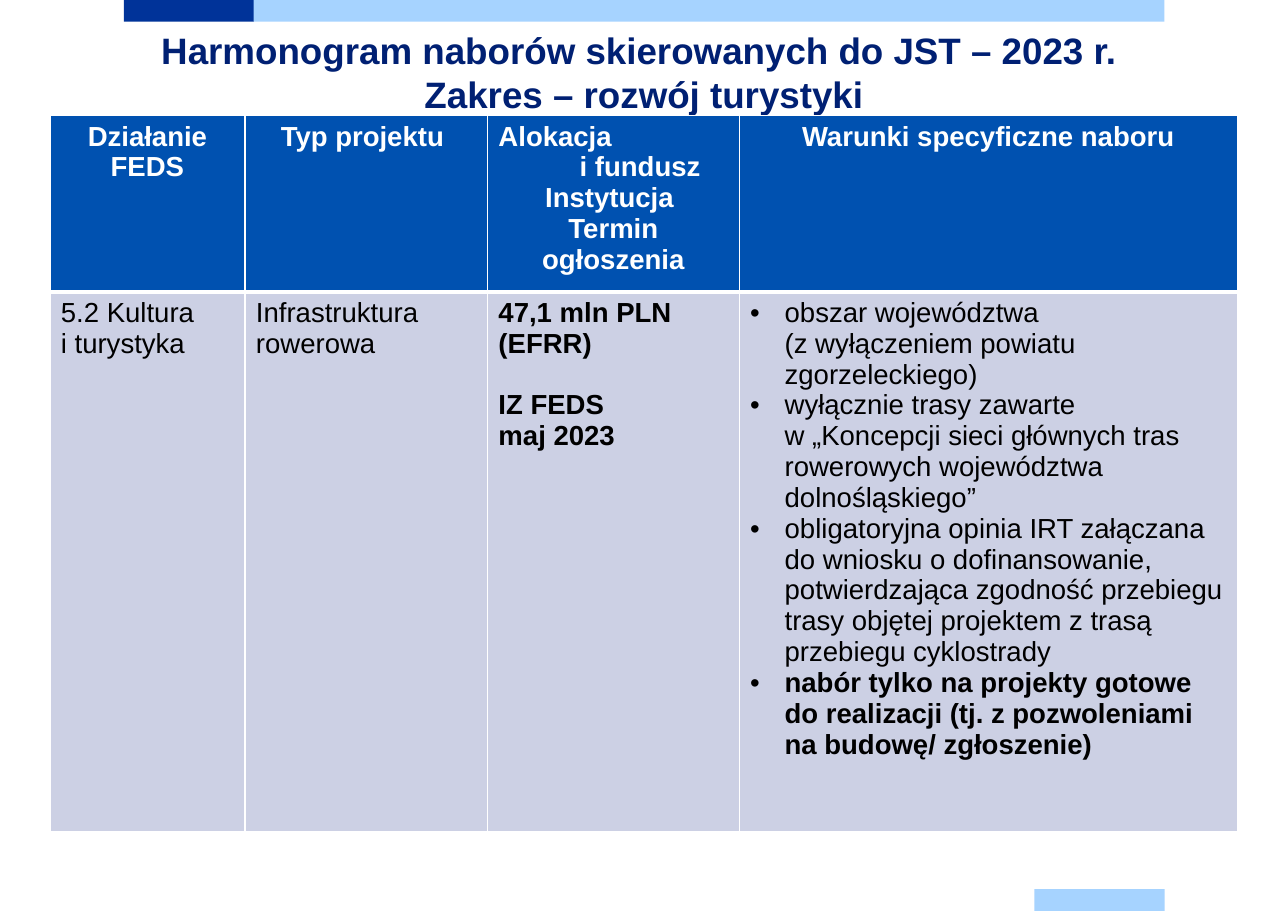
"""Build the slide with the 2023 call schedule for tourism development."""
from lxml.etree import SubElement
from pptx import Presentation
from pptx.dml.color import RGBColor
from pptx.enum.shapes import MSO_SHAPE
from pptx.enum.text import PP_ALIGN as Align
from pptx.oxml.ns import qn
from pptx.util import Pt

COLORS = {
    "navy": "003399", "sky": "A6D3FF", "title": "002073", "header": "0051B0",
    "body": "CCD0E4", "white": "FFFFFF", "black": "000000",
}


def write_paragraphs(text_frame, lines, size, color, bold, alignment):
    text_frame.word_wrap = True
    text_frame.text = "\n".join(lines)
    for paragraph in text_frame.paragraphs:
        paragraph.alignment = alignment
        for run in paragraph.runs:
            run.font.name = "Arial"
            run.font.size = Pt(size)
            run.font.bold = bold
            run.font.color.rgb = RGBColor.from_string(COLORS[color])


def style_cell(cell, fill, borders):
    properties = cell._tc.get_or_add_tcPr()
    for side, width in borders.items():
        line = SubElement(properties, qn(f"a:{side}"), w=str(Pt(width)))
        solid = SubElement(line, qn("a:solidFill"))
        SubElement(solid, qn("a:srgbClr"), val=COLORS["white"])
    cell.fill.solid()
    cell.fill.fore_color.rgb = RGBColor.from_string(COLORS[fill])


presentation = Presentation()
presentation.slide_width = Pt(841.68)
presentation.slide_height = Pt(595.44)
slide = presentation.slides.add_slide(presentation.slide_layouts[6])

bars = [(80.9, 0, 85, "navy"), (165.8, 0, 595.2, "sky"), (676, 581.2, 85, "sky")]
for left, top, width, color in bars:
    bar = slide.shapes.add_shape(
        MSO_SHAPE.RECTANGLE, Pt(left), Pt(top), Pt(width), Pt(14.2))
    bar.shadow.inherit = False
    bar.fill.solid()
    bar.fill.fore_color.rgb = RGBColor.from_string(COLORS[color])
    bar.line.fill.background()

title = slide.shapes.add_textbox(Pt(80.6), Pt(14.4), Pt(680.4), Pt(65.5))
title_lines = ["Harmonogram naborów skierowanych do JST – 2023 r. ",
               "Zakres – rozwój turystyki"]
write_paragraphs(title.text_frame, title_lines, 24, "title", True, Align.CENTER)

headers = [
    ["Działanie FEDS"],
    ["Typ projektu "],
    ["Alokacja", "i fundusz", "Instytucja ", "Termin ogłoszenia"],
    ["Warunki specyficzne naboru"],
]
details = [
    ["5.2 Kultura \vi turystyka"],
    ["Infrastruktura rowerowa"],
    ["47,1 mln PLN (EFRR)", "IZ FEDS", "maj 2023"],
    ["obszar województwa \v(z wyłączeniem powiatu zgorzeleckiego)",
     "wyłącznie trasy zawarte \vw „Koncepcji sieci głównych tras rowerowych "
     "województwa dolnośląskiego”",
     "obligatoryjna opinia IRT załączana do wniosku o dofinansowanie, "
     "potwierdzająca zgodność przebiegu trasy objętej projektem z trasą "
     "przebiegu cyklostrady",
     "nabór tylko na projekty gotowe do realizacji (tj. z pozwoleniami "
     "na budowę/ zgłoszenie)"],
]
column_widths = [127.5, 158.5, 164.5, 325.5]
row_heights = [114.5, 352.5]
table = slide.shapes.add_table(
    2, 4, Pt(32.6), Pt(75.6), Pt(sum(column_widths)), Pt(sum(row_heights))).table
for column, width in zip(table.columns, column_widths):
    column.width = Pt(width)
for row, height in zip(table.rows, row_heights):
    row.height = Pt(height)

for index, (header, detail) in enumerate(zip(headers, details)):
    header_cell, detail_cell = table.cell(0, index), table.cell(1, index)
    write_paragraphs(header_cell.text_frame, header, 18, "white", True, Align.CENTER)
    write_paragraphs(
        detail_cell.text_frame, detail, 18, "black", index == 2, Align.LEFT)
    style_cell(header_cell, "header", {"lnL": 1, "lnR": 1, "lnT": 1, "lnB": 3})
    style_cell(detail_cell, "body", {"lnL": 1, "lnR": 1, "lnT": 3, "lnB": 1})

allocation, fund = table.cell(0, 2).text_frame.paragraphs[:2]
allocation.alignment = Align.LEFT
fund._p.get_or_add_pPr().set("marL", str(Pt(35)))
table.cell(1, 2).text_frame.paragraphs[1].space_before = Pt(20)

conditions = table.cell(1, 3).text_frame.paragraphs
for paragraph in conditions:
    properties = paragraph._p.get_or_add_pPr()
    properties.set("marL", str(Pt(22.5)))
    properties.set("indent", str(Pt(-22.5)))
    SubElement(properties, qn("a:buFont"), typeface="Arial")
    SubElement(properties, qn("a:buChar"), char="•")
for run in conditions[-1].runs:
    run.font.bold = True

presentation.save("out.pptx")
